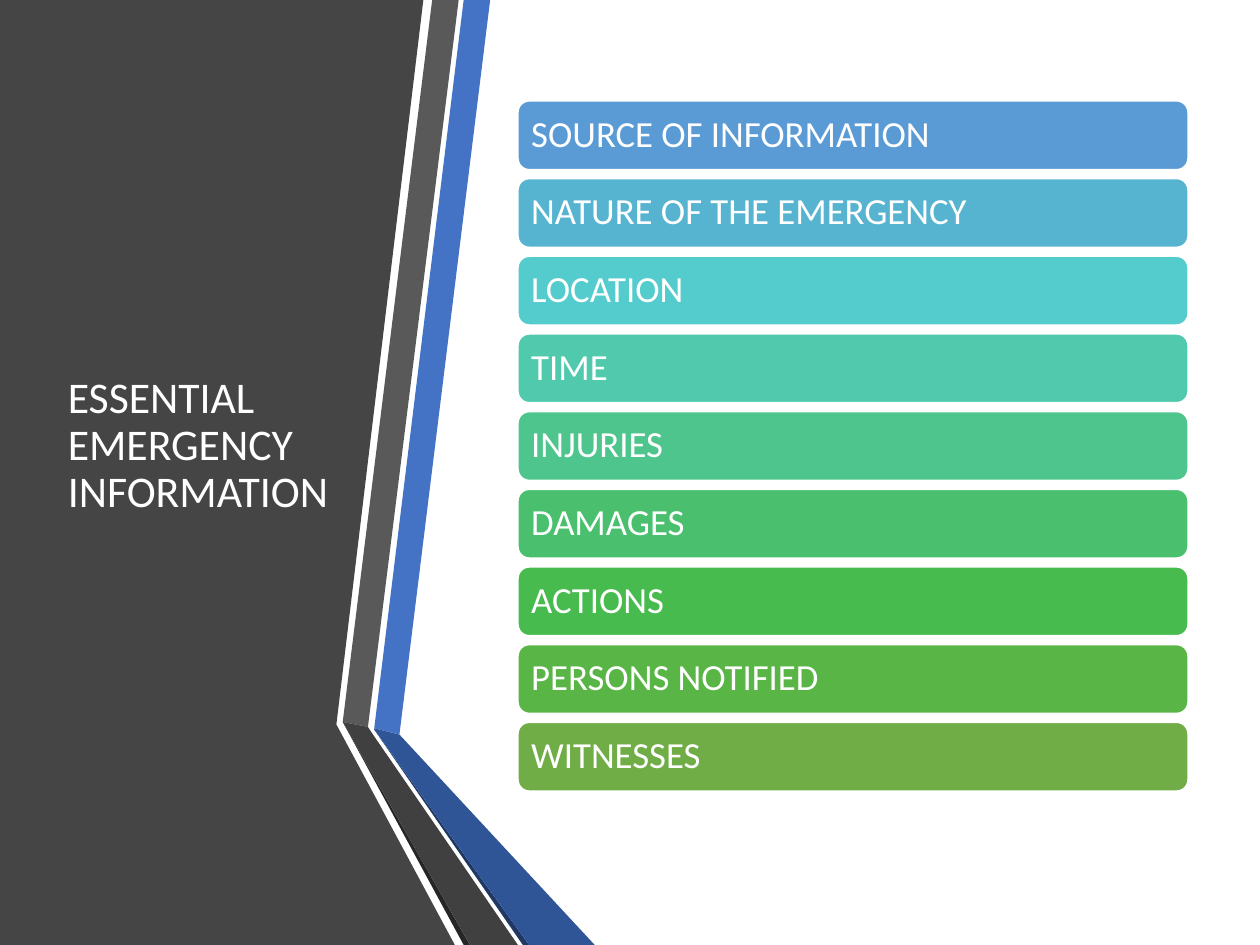
from collections import namedtuple

from pptx import Presentation
from pptx.dml.color import RGBColor
from pptx.enum.shapes import MSO_SHAPE as Shape
from pptx.enum.text import MSO_ANCHOR as Anchor, PP_ALIGN as Align
from pptx.util import Inches, Pt

Box = namedtuple("Box", "left top width height")

PAGE = Box(0, 0, 10, 7.5)
BAND_PANEL = Box(0, 0, 4.72, PAGE.height)
TITLE_BOX = Box(0.44, 0.75, 2.28, 5.58)
LIST_BOX = Box(4.11, 0.8, 5.32, 5.48)

FONT = "Calibri"
WHITE = RGBColor(0xFF, 0xFF, 0xFF)
CHARCOAL = RGBColor(0x45, 0x45, 0x45)
BLUE = RGBColor(0x44, 0x72, 0xC4)
BLUE_SHADE = RGBColor(0x2F, 0x55, 0x97)
BLUE_EDGE = RGBColor(0x20, 0x38, 0x64)
GREY = RGBColor(0x59, 0x59, 0x59)
GREY_SHADE = RGBColor(0x40, 0x40, 0x40)
GREY_EDGE = RGBColor(0x26, 0x26, 0x26)

# Corners in inches from the panel's top left; bands fold at about 5.75.
BANDS = [
    (CHARCOAL, [(0, 0), (3.36, 0), (2.67, 5.75), (3.61, 7.5), (0, 7.5)]),
    (BLUE, [(3.68, 0), (3.89, 0), (3.17, 5.83), (2.97, 5.78)]),
    (GREY, [(3.43, 0), (3.64, 0), (2.92, 5.77), (2.72, 5.73)]),
    (GREY_EDGE, [(2.72, 5.73), (3.73, 7.5), (3.68, 7.5)]),
    (BLUE_EDGE, [(2.97, 5.79), (4.2, 7.5), (4.15, 7.5)]),
    (BLUE_SHADE, [(2.97, 5.78), (3.17, 5.83), (4.72, 7.5), (4.2, 7.5), (2.97, 5.79)]),
    (GREY_SHADE, [(2.72, 5.73), (2.92, 5.77), (2.96, 5.83), (4.11, 7.5), (3.73, 7.5)]),
]

ITEMS = [
    ("SOURCE OF INFORMATION", RGBColor(0x5B, 0x9B, 0xD5)),
    ("NATURE OF THE EMERGENCY", RGBColor(0x57, 0xB4, 0xD1)),
    ("LOCATION", RGBColor(0x54, 0xCC, 0xCD)),
    ("TIME", RGBColor(0x51, 0xC9, 0xAD)),
    ("INJURIES", RGBColor(0x4D, 0xC5, 0x8D)),
    ("DAMAGES", RGBColor(0x4A, 0xC0, 0x6E)),
    ("ACTIONS", RGBColor(0x48, 0xBB, 0x4F)),
    ("PERSONS NOTIFIED", RGBColor(0x59, 0xB5, 0x46)),
    ("WITNESSES", RGBColor(0x70, 0xAD, 0x47)),
]


def to_emu(box):
    return [Inches(length) for length in box]


def paint(shape, color):
    shape.shadow.inherit = False
    shape.fill.solid()
    shape.fill.fore_color.rgb = color


def write(shape, text, size):
    """Put one white, left-aligned, vertically centred paragraph in a shape."""
    frame = shape.text_frame
    frame.word_wrap = True
    frame.vertical_anchor = Anchor.MIDDLE
    para = frame.paragraphs[0]
    para.alignment = Align.LEFT
    para.line_spacing = 0.9
    span = para.add_run()
    span.text = text
    span.font.name = FONT
    span.font.size = Pt(size)
    span.font.color.rgb = WHITE


def add_folded_bands(page, box):
    for color, corners in BANDS:
        points = [(Inches(box.left + x), Inches(box.top + y)) for x, y in corners]
        builder = page.shapes.build_freeform(*points[0])
        builder.add_line_segments(points[1:], close=True)
        band = builder.convert_to_shape()
        paint(band, color)
        band.line.fill.background()


def add_title(page, box):
    write(page.shapes.add_textbox(*to_emu(box)), "ESSENTIAL EMERGENCY INFORMATION", 25)


def add_bar_list(page, box):
    """Stack the items as equal bars, with a gap of an eighth of a bar."""
    gap_share = 1 / 8
    bar_height = box.height / (len(ITEMS) + (len(ITEMS) - 1) * gap_share)
    pitch = bar_height * (1 + gap_share)
    for row, (text, color) in enumerate(ITEMS):
        bar_box = Box(box.left, box.top + row * pitch, box.width, bar_height)
        bar = page.shapes.add_shape(Shape.ROUNDED_RECTANGLE, *to_emu(bar_box))
        paint(bar, color)
        bar.line.color.rgb = WHITE
        bar.line.width = Pt(1)
        frame = bar.text_frame
        frame.margin_left = frame.margin_right = Inches(0.08)
        frame.margin_top = frame.margin_bottom = Inches(0.08)
        write(bar, text, 21)


def main():
    deck = Presentation()
    deck.slide_width, deck.slide_height = Inches(PAGE.width), Inches(PAGE.height)
    page = deck.slides.add_slide(deck.slide_layouts[6])
    add_folded_bands(page, BAND_PANEL)
    add_title(page, TITLE_BOX)
    add_bar_list(page, LIST_BOX)
    deck.save("out.pptx")


if __name__ == "__main__":
    main()
